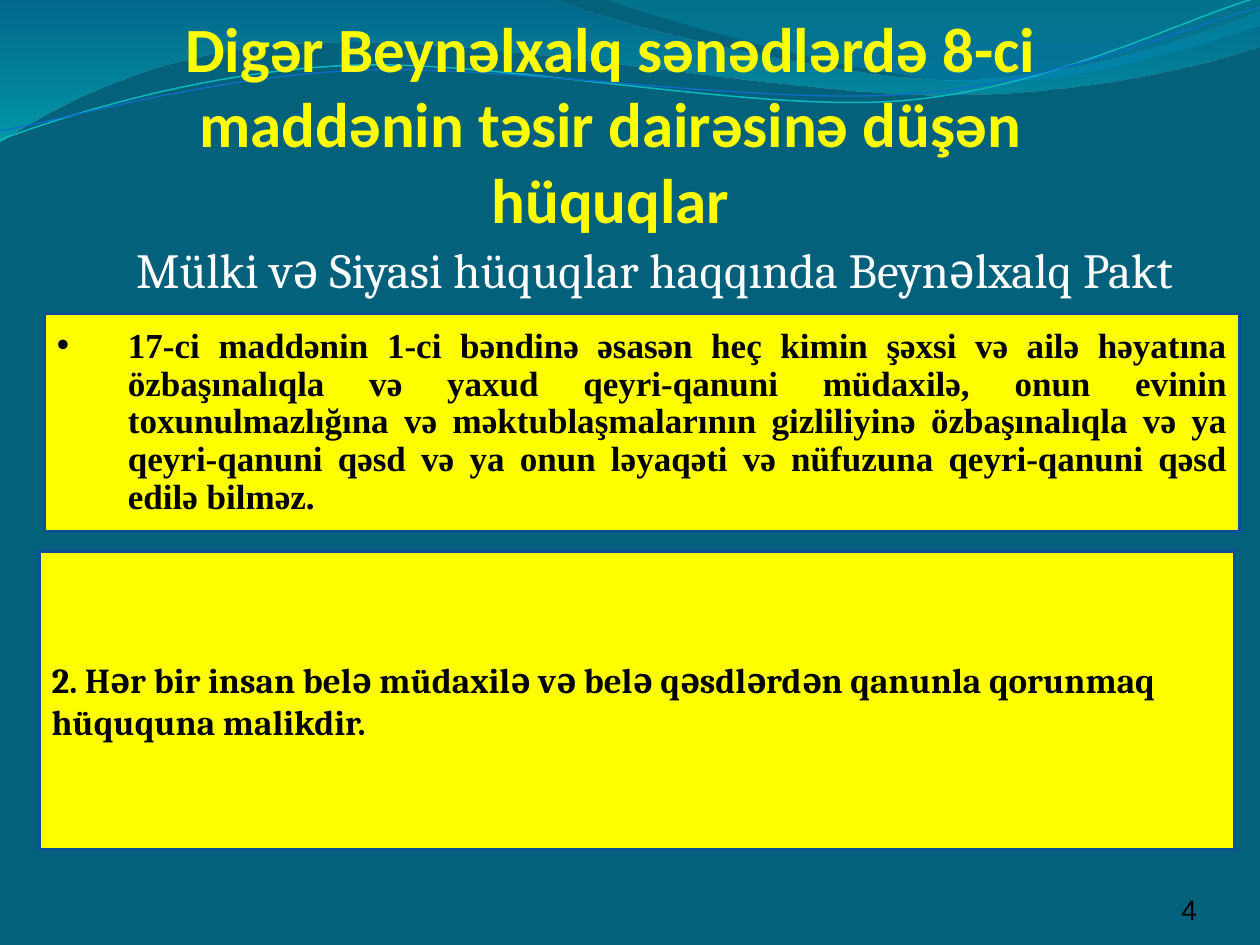
from lxml import etree
from pptx import Presentation
from pptx.dml.color import RGBColor
from pptx.enum.shapes import MSO_SHAPE
from pptx.enum.text import MSO_ANCHOR, MSO_AUTO_SIZE, PP_ALIGN
from pptx.oxml.ns import qn
from pptx.util import Cm, Pt

RECTANGLE = MSO_SHAPE.RECTANGLE
TOP, MIDDLE, BOTTOM = MSO_ANCHOR.TOP, MSO_ANCHOR.MIDDLE, MSO_ANCHOR.BOTTOM
LEFT, CENTER, RIGHT = PP_ALIGN.LEFT, PP_ALIGN.CENTER, PP_ALIGN.RIGHT
JUSTIFY = PP_ALIGN.JUSTIFY
NO_AUTOFIT = MSO_AUTO_SIZE.NONE

COLORS = {
    "background": "04617B", "yellow": "FFFF00", "white": "FFFFFF",
    "black": "000000", "border": "0B5292",
    "wave_blue": "0074A1", "wave_cyan": "00C6CF",
    "crest_teal": "00A1A9", "crest_blue": "008BBF",
    "line_cyan": "0AB8BF", "line_blue": "0F6FC6",
}
LINE_TILT = -2.7

# Outlines in cm: a start point, then lines (one point) or Bézier curves (three).
WAVE = [
    [(0, -0.03)], [(11.18, -0.03)],
    [(12.09, 0.43), (16.87, 1.6), (19.25, 1.6)],
    [(21.67, 1.6), (24.33, 0.66), (25.4, 0.23)],
    [(25.43, 0.91)],
    [(24.97, 1.12), (22.1, 1.93), (18.95, 1.91)],
    [(15.8, 1.91), (9.7, 0.71), (6.53, 0.86)],
    [(3.28, 0.89), (1.17, 2.11), (-0.03, 2.87)],
]
CREST = [
    [(12.17, -0.03)],
    [(12.93, 0.28), (17.32, 1.57), (19.53, 1.65)],
    [(21.74, 1.75), (24.41, 0.81), (25.4, 0.53)],
    [(25.4, 0)],
]
CYAN_LINE = [
    [(-0.05, 2.22)],
    [(1.19, 1.82), (4.02, 1.04), (7.05, 1.05)],
    [(10.05, 1.07), (15.02, 2.37), (18.08, 2.29)],
    [(21.13, 2.2), (23.86, 0.91), (25.41, 0.55)],
]
BLUE_LINE = [
    [(-0.04, 2.04)],
    [(1.16, 1.9), (4.17, 1.15), (7.2, 1.16)],
    [(10.25, 1.18), (15.13, 2.23), (18.19, 2.16)],
    [(21.22, 2.11), (23.93, 1.06), (25.45, 0.75)],
]


def rgb(name):
    return RGBColor.from_string(COLORS[name])


def add_outline(slide, segments, close):
    """Join the end points with straight lines, then bend the curved ones."""
    start, *ends = [tuple(map(Cm, segment[-1])) for segment in segments]
    builder = slide.shapes.build_freeform(*start)
    builder.add_line_segments(ends, close=close)
    shape = builder.convert_to_shape()
    shape.shadow.inherit = False
    lines = list(shape.element.iter(qn("a:lnTo")))
    for line, segment in zip(lines, segments[1:]):
        if len(segment) == 3:
            curve = etree.Element(qn("a:cubicBezTo"))
            for x, y in segment:
                etree.SubElement(curve, qn("a:pt"), x=str(Cm(x) - shape.left),
                                 y=str(Cm(y) - shape.top))
            line.getparent().replace(line, curve)
    return shape


def add_wave(slide, segments, stops):
    """Add a filled wave; each stop is position, colour, opacity in percent."""
    shape = add_outline(slide, segments, True)
    shape.line.fill.background()
    shape.fill.gradient()
    shape.fill.gradient_angle = 270
    for stop, (position, color, _) in zip(shape.fill.gradient_stops, stops):
        stop.position = position
        stop.color.rgb = rgb(color)
    color_elements = list(shape.element.spPr.iter(qn("a:srgbClr")))
    for element, (_, _, opacity) in zip(color_elements, stops):
        etree.SubElement(element, qn("a:alpha"), val=str(opacity * 1000))


def add_wave_line(slide, segments, color, width):
    shape = add_outline(slide, segments, False)
    shape.rotation = LINE_TILT
    shape.fill.background()
    shape.line.color.rgb = rgb(color)
    shape.line.width = Pt(width)


def write(shape, text, font, size, color, bold=False, align=LEFT, anchor=TOP,
          insets=None, line_spacing=None):
    frame = shape.text_frame
    frame.word_wrap = True
    frame.auto_size = NO_AUTOFIT
    frame.vertical_anchor = anchor
    if insets:
        (frame.margin_left, frame.margin_top,
         frame.margin_right, frame.margin_bottom) = map(Cm, insets)
    paragraph = frame.paragraphs[0]
    paragraph.alignment = align
    paragraph.space_before = Pt(0)
    if line_spacing:
        paragraph.line_spacing = line_spacing
    run = paragraph.add_run()
    run.text = text
    run.font.name = font
    run.font.size = Pt(size)
    run.font.bold = bold
    run.font.color.rgb = rgb(color)
    return paragraph


def place_in_front(shape, left, top, width, height):
    shape.left, shape.top, shape.width, shape.height = map(Cm, (left, top, width, height))
    shape.element.getparent().append(shape.element)


def add_article(slide, left, top, height, text, font, **options):
    shape = slide.shapes.add_shape(RECTANGLE, Cm(left), Cm(top), Cm(24.1), Cm(height))
    shape.shadow.inherit = False
    shape.fill.solid()
    shape.fill.fore_color.rgb = rgb("yellow")
    shape.line.color.rgb = rgb("border")
    shape.line.width = Pt(2)
    return write(shape, text, font, 20, "black", bold=True, anchor=MIDDLE, **options)


def add_bullet(paragraph, indent):
    properties = paragraph._p.get_or_add_pPr()
    properties.set("marL", str(Cm(indent)))
    properties.set("indent", str(-Cm(indent)))
    etree.SubElement(properties, qn("a:buFont"), typeface="Arial")
    etree.SubElement(properties, qn("a:buChar"), char="•")


def main():
    presentation = Presentation()
    presentation.slide_width, presentation.slide_height = Cm(25.4), Cm(19.05)
    slide = presentation.slides.add_slide(presentation.slide_layouts[0])
    slide.background.fill.solid()
    slide.background.fill.fore_color.rgb = rgb("background")

    add_wave(slide, WAVE, [(0, "wave_blue", 45), (1, "wave_cyan", 55)])
    add_wave(slide, CREST, [(0, "crest_teal", 30), (0.8, "crest_blue", 45)])
    add_wave_line(slide, CYAN_LINE, "line_cyan", 0.85)
    add_wave_line(slide, BLUE_LINE, "line_blue", 0.75)

    title, subtitle = slide.placeholders
    place_in_front(title, 1.58, 0.4, 21.51, 4.36)
    write(title, "Digər Beynəlxalq sənədlərdə 8-ci maddənin təsir dairəsinə düşən hüquqlar",
          "Calibri", 36, "yellow", bold=True, align=CENTER, anchor=BOTTOM,
          insets=(0, 0, 0.05, 0))
    place_in_front(subtitle, 0.51, 4.72, 24.31, 14.94)
    write(subtitle, "Mülki və Siyasi hüquqlar haqqında Beynəlxalq Pakt",
          "Cambria", 28, "white", align=CENTER, insets=(1.1, 0.24, 0.05, 0.13),
          line_spacing=0.9)

    number = slide.shapes.add_textbox(Cm(22.02), Cm(17.65), Cm(2.11), Cm(1.02))
    write(number, "4", "Arial", 16, "black", align=RIGHT, anchor=BOTTOM,
          insets=(0, 0, 0, 0))

    first_clause = add_article(
        slide, 0.9, 6.32, 4.4,
        "17-ci maddənin 1-ci bəndinə əsasən heç kimin şəxsi və ailə həyatına "
        "özbaşınalıqla və yaxud qeyri-qanuni müdaxilə, onun evinin toxunulmazlığına "
        "və məktublaşmalarının gizliliyinə özbaşınalıqla və ya qeyri-qanuni qəsd və ya "
        "onun ləyaqəti və nüfuzuna qeyri-qanuni qəsd edilə bilməz.",
        "Times New Roman", align=JUSTIFY, line_spacing=0.9)
    add_bullet(first_clause, 1.43)
    add_article(
        slide, 0.79, 11.11, 6.02,
        "2. Hər bir insan belə müdaxilə və belə qəsdlərdən qanunla qorunmaq "
        "hüququna malikdir.", "Cambria")

    presentation.save("out.pptx")


if __name__ == "__main__":
    main()
